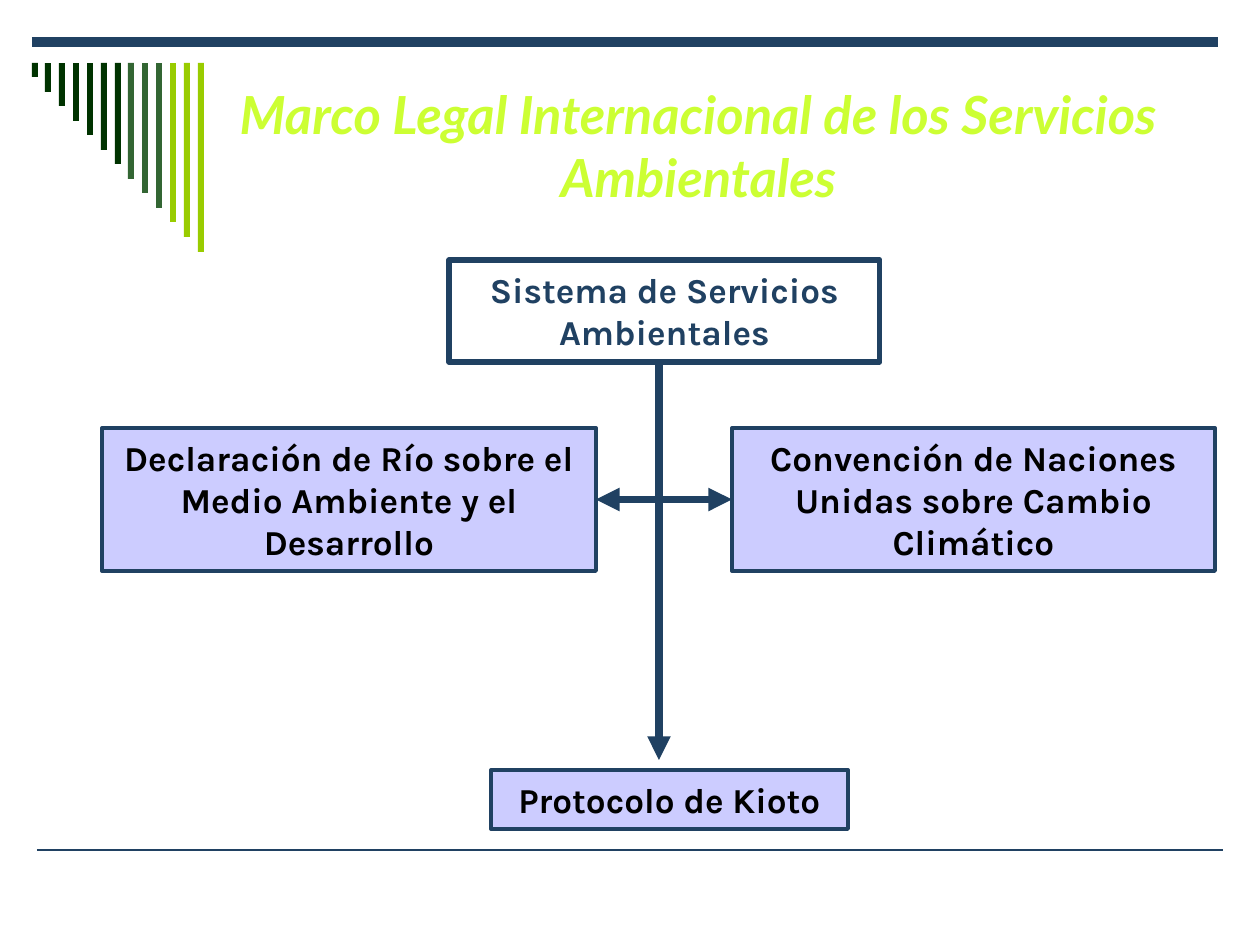
from dataclasses import dataclass

from lxml import etree
from pptx import Presentation
from pptx.dml.color import RGBColor
from pptx.enum.shapes import MSO_CONNECTOR, MSO_SHAPE
from pptx.enum.text import MSO_ANCHOR, PP_ALIGN
from pptx.oxml.ns import qn
from pptx.util import Emu, Pt

STRAIGHT = MSO_CONNECTOR.STRAIGHT
RECTANGLE = MSO_SHAPE.RECTANGLE
CENTER = PP_ALIGN.CENTER
MIDDLE = MSO_ANCHOR.MIDDLE
LEFT_SIDE, RIGHT_SIDE = 1, 3

NAVY = RGBColor(0x20, 0x41, 0x62)
LAVENDER = RGBColor(0xCC, 0xCC, 0xFF)
BLACK = RGBColor(0x00, 0x00, 0x00)
YELLOW_GREEN = RGBColor(0xCC, 0xFF, 0x33)
DARK_GREEN = RGBColor(0x00, 0x33, 0x00)
MID_GREEN = RGBColor(0x33, 0x66, 0x33)
LIME = RGBColor(0x99, 0xCC, 0x00)

EMU_PER_PX = 914400 / 126
TITLE_FONT = "Lato"
BODY_FONT = "Karla"


@dataclass(frozen=True)
class Box:
    text: str
    left: int
    top: int
    width: int
    height: int
    fill: RGBColor | None = LAVENDER
    color: RGBColor = BLACK
    border: float = 2.25


@dataclass(frozen=True)
class Line:
    start: tuple[int, int]
    end: tuple[int, int]
    weight: float
    arrows: tuple[str, ...] = ()


SYSTEM = Box("Sistema de Servicios Ambientales", 449, 260, 431, 102, None, NAVY, 3)
RIO = Box("Declaración de Río sobre el Medio Ambiente y el Desarrollo",
          102, 428, 494, 143)
CONVENTION = Box("Convención de Naciones Unidas sobre Cambio Climático",
                 732, 428, 483, 143)
KYOTO = Box("Protocolo de Kioto", 491, 770, 357, 59)

TOP_RULE = Line((32, 42), (1218, 42), 6)
BOTTOM_RULE = Line((37, 850), (1223, 850), 1)
TRUNK = Line((659, 365), (659, 760), 4.5, ("tailEnd",))
BRANCH = Line((596, 500), (732, 500), 4.5, ("headEnd", "tailEnd"))

STRIPE_COLORS = [DARK_GREEN] * 7 + [MID_GREEN] * 3 + [LIME] * 3


def px(length: int) -> Emu:
    return Emu(round(length * EMU_PER_PX))


def write_text(shape, text: str, *, font: str, size: float, color: RGBColor,
               italic: bool = False) -> None:
    frame = shape.text_frame
    frame.word_wrap = True
    frame.vertical_anchor = MIDDLE
    paragraph = frame.paragraphs[0]
    paragraph.alignment = CENTER
    run = paragraph.add_run()
    run.text = text
    run.font.name = font
    run.font.size = Pt(size)
    run.font.bold = True
    run.font.italic = italic
    run.font.color.rgb = color


def add_rectangle(shapes, left: int, top: int, width: int, height: int,
                  fill: RGBColor | None):
    shape = shapes.add_shape(RECTANGLE, px(left), px(top), px(width), px(height))
    shape.shadow.inherit = False
    if fill is None:
        shape.fill.background()
    else:
        shape.fill.solid()
        shape.fill.fore_color.rgb = fill
    shape.line.fill.background()
    return shape


def add_box(slide, box: Box):
    shape = add_rectangle(slide.shapes, box.left, box.top, box.width, box.height,
                          box.fill)
    shape.line.color.rgb = NAVY
    shape.line.width = Pt(box.border)
    write_text(shape, box.text, font=BODY_FONT, size=20, color=box.color)
    return shape


def add_line(slide, line: Line):
    connector = slide.shapes.add_connector(
        STRAIGHT, *(px(value) for value in line.start + line.end))
    connector.line.color.rgb = NAVY
    connector.line.width = Pt(line.weight)
    outline = connector.line._get_or_add_ln()
    for arrow in line.arrows:
        etree.SubElement(outline, qn(f"a:{arrow}"), type="triangle")
    etree.SubElement(connector._element.spPr, qn("a:effectLst"))
    return connector


def add_stripes(slide) -> None:
    group = slide.shapes.add_group_shape()
    count = len(STRIPE_COLORS)
    for index, color in enumerate(STRIPE_COLORS):
        left = 32 + 166 * index // (count - 1)
        height = 189 * (index + 1) // count
        add_rectangle(group.shapes, left, 63, 6, height, color)


def main() -> None:
    presentation = Presentation()
    presentation.slide_width = px(1260)
    presentation.slide_height = px(945)
    slide = presentation.slides.add_slide(presentation.slide_layouts[5])

    # Rules and green stripes
    add_line(slide, BOTTOM_RULE)
    add_line(slide, TOP_RULE)
    add_stripes(slide)

    # Title
    title = slide.shapes.title
    title.left, title.top = px(184), px(76)
    title.width, title.height = px(1029), px(139)
    write_text(title, "Marco Legal Internacional de los Servicios Ambientales",
               font=TITLE_FONT, size=30, color=YELLOW_GREEN, italic=True)

    # Boxes
    add_box(slide, KYOTO)
    convention = add_box(slide, CONVENTION)
    rio = add_box(slide, RIO)
    add_box(slide, SYSTEM)

    # Arrows
    add_line(slide, TRUNK)
    branch = add_line(slide, BRANCH)
    branch.begin_connect(rio, RIGHT_SIDE)
    branch.end_connect(convention, LEFT_SIDE)

    presentation.save("out.pptx")


if __name__ == "__main__":
    main()
